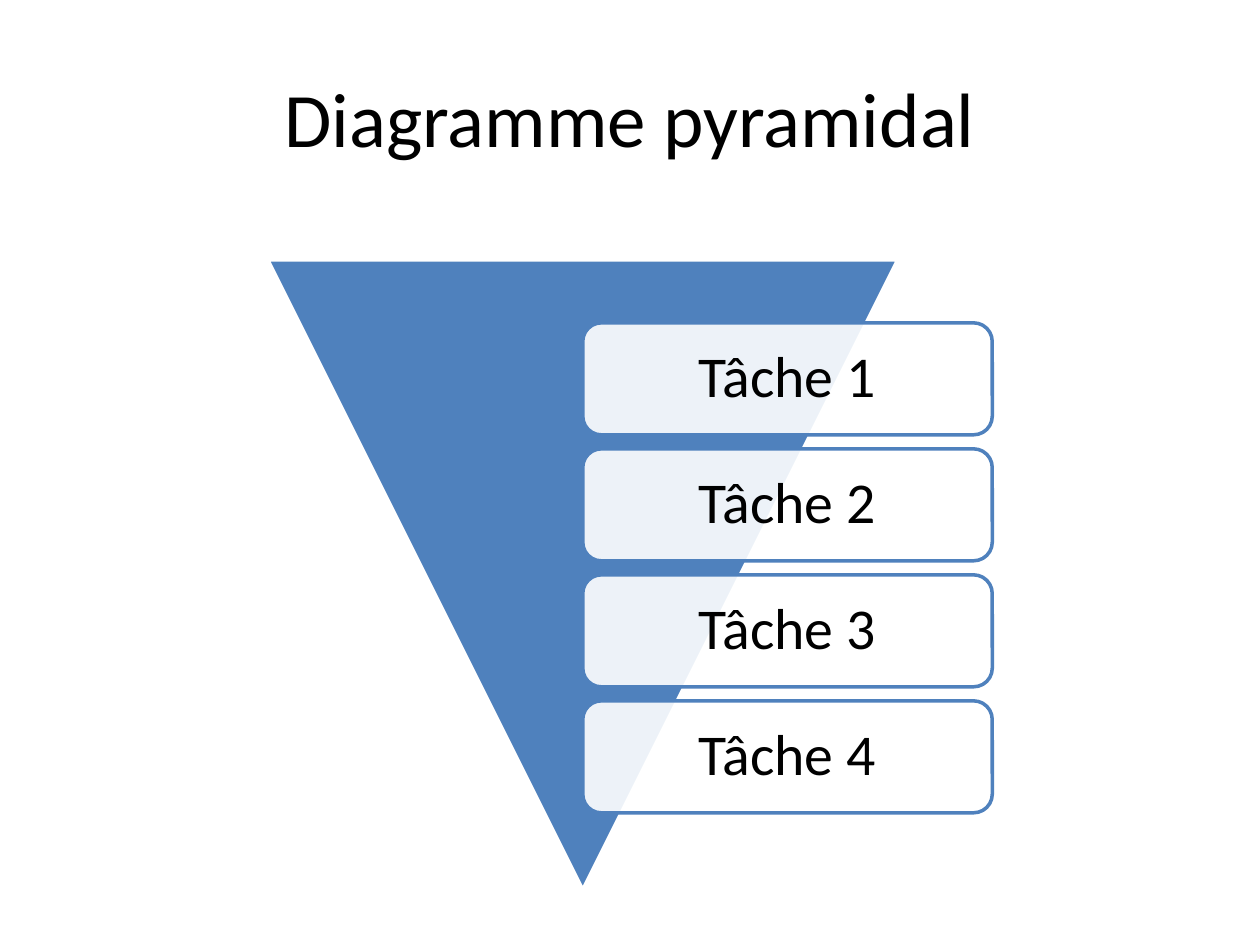
from dataclasses import dataclass

from lxml import etree
from pptx import Presentation
from pptx.dml.color import RGBColor
from pptx.enum import shapes, text
from pptx.oxml.ns import qn
from pptx.util import Pt


@dataclass(frozen=True)
class Theme:
    font: str = "Calibri"
    accent: RGBColor = RGBColor(0x4F, 0x81, 0xBD)
    white: RGBColor = RGBColor(0xFF, 0xFF, 0xFF)
    black: RGBColor = RGBColor(0, 0, 0)
    title_size: float = 44
    task_size: float = 33
    line_width: float = 2


THEME = Theme()
TASKS = ["Tâche 1", "Tâche 2", "Tâche 3", "Tâche 4"]


def write(sp, content, size, spacing=1.0, inset_x=7.2, inset_y=3.6):
    tf = sp.text_frame
    tf.word_wrap = True
    tf.vertical_anchor = text.MSO_ANCHOR.MIDDLE
    tf.margin_left = tf.margin_right = Pt(inset_x)
    tf.margin_top = tf.margin_bottom = Pt(inset_y)
    p = tf.paragraphs[0]
    p.alignment = text.PP_ALIGN.CENTER
    p.line_spacing = spacing
    r = p.add_run()
    r.text = content
    r.font.name = THEME.font
    r.font.size = Pt(size)
    r.font.color.rgb = THEME.black


def add_shape(s, kind, x, y, w, h, fill, line, opacity=100):
    sp = s.shapes.add_shape(kind, Pt(x), Pt(y), Pt(w), Pt(h))
    sp.shadow.inherit = False
    sp.fill.solid()
    sp.fill.fore_color.rgb = fill
    sp.line.color.rgb = line
    sp.line.width = Pt(THEME.line_width)
    if opacity < 100:
        color = sp.fill._xPr.find(qn("a:solidFill"))[0]
        etree.SubElement(color, qn("a:alpha"), val=str(opacity * 1000))
    return sp


def add_title(s, content, x, y, w, h):
    sp = s.shapes.add_textbox(Pt(x), Pt(y), Pt(w), Pt(h))
    write(sp, content, THEME.title_size)


def add_pyramid(s, tasks, x, y, side):
    triangle = add_shape(s, shapes.MSO_SHAPE.ISOSCELES_TRIANGLE,
                         x, y, side, side, THEME.accent, THEME.white)
    triangle.rotation = 180

    pitch = side * 0.8 / len(tasks)
    task_w, task_h = side * 0.65, pitch * 8 / 9
    for i, task in enumerate(tasks):
        sp = add_shape(s, shapes.MSO_SHAPE.ROUNDED_RECTANGLE,
                       x + side / 2, y + side * 0.1 + i * pitch,
                       task_w, task_h, THEME.white, THEME.accent, opacity=90)
        write(sp, task, THEME.task_size, spacing=0.9, inset_x=10, inset_y=10)


def main():
    prs = Presentation()
    prs.slide_width, prs.slide_height = Pt(720), Pt(540)
    s = prs.slides.add_slide(prs.slide_layouts[6])
    add_title(s, "Diagramme pyramidal", 36, 21.6, 648, 90)
    add_pyramid(s, TASKS, 153, 148.5, 360)
    prs.save("out.pptx")


if __name__ == "__main__":
    main()
